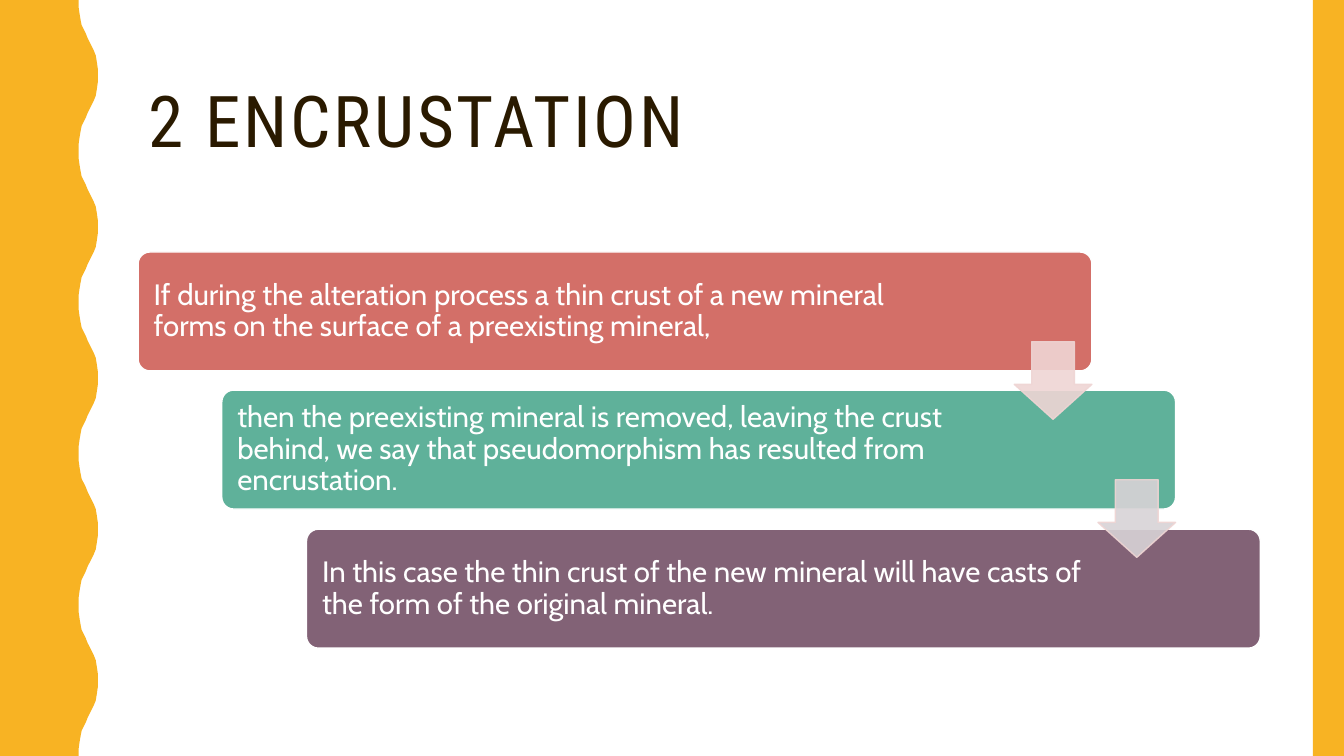
from lxml import etree
from pptx import Presentation
from pptx.dml.color import RGBColor
from pptx.enum.shapes import MSO_SHAPE
from pptx.enum.text import MSO_ANCHOR, PP_ALIGN
from pptx.oxml.ns import qn
from pptx.util import Pt

RECTANGLE = MSO_SHAPE.RECTANGLE
ROUNDED = MSO_SHAPE.ROUNDED_RECTANGLE
DOWN_ARROW = MSO_SHAPE.DOWN_ARROW
MIDDLE = MSO_ANCHOR.MIDDLE
LEFT = PP_ALIGN.LEFT

PX = 9144
SLIDE_WIDTH, SLIDE_HEIGHT = 1333, 750
CARD_WIDTH, CARD_HEIGHT = 946, 118
WAVE_PERIOD = 150
HALF_WAVE = [(78, 0), (78, 7), (79, 14), (80, 20), (81, 25), (83, 29), (85, 33), (87, 38),
             (89, 42), (91, 46), (93, 50), (95, 55), (96, 61), (97, 68), (97, 75)]

COLORS = {
    "white": "FFFFFF",
    "title": "2A1A00",
    "gold": "F8B323",
    "coral": "D36F68",
    "green": "5FB19A",
    "plum": "826276",
    "pink": "EFD5D4",
    "grey": "D8D3D6",
}

STEPS = [
    ("coral", "If during the alteration process a thin crust of a new mineral forms "
              "on the surface of a preexisting mineral,"),
    ("green", "then the preexisting mineral is removed, leaving the crust behind, "
              "we say that pseudomorphism has resulted from encrustation."),
    ("plum", "In this case the thin crust of the new mineral will have casts of "
             "the form of the original mineral."),
]
ARROW_COLORS = ["pink", "grey"]


def color(name):
    """Return the named colour."""
    return RGBColor.from_string(COLORS[name])


def paint(shape, fill, line=None):
    """Give a shape a flat fill and an optional thin outline."""
    shape.shadow.inherit = False
    shape.fill.solid()
    shape.fill.fore_color.rgb = color(fill)
    if line:
        shape.line.color.rgb = color(line)
        shape.line.width = Pt(1)
    else:
        shape.line.fill.background()


def add_preset(slide, kind, box, fill, line=None, adjustments=()):
    """Add a painted preset shape."""
    shape = slide.shapes.add_shape(kind, *(length * PX for length in box))
    for index, value in enumerate(adjustments):
        shape.adjustments[index] = value
    paint(shape, fill, line)
    return shape


def write_text(shape, text, font_name, size, text_color):
    """Write one left-aligned, vertically centred paragraph in a shape."""
    frame = shape.text_frame
    frame.word_wrap = True
    frame.vertical_anchor = MIDDLE
    paragraph = frame.paragraphs[0]
    paragraph.alignment = LEFT
    paragraph.line_spacing = 0.9
    run = paragraph.add_run()
    run.text = text
    run.font.name = font_name
    run.font.size = Pt(size)
    run.font.color.rgb = color(text_color)
    return run


def add_wave(slide):
    """Add the wavy band along the left edge."""
    mirrored = [(x, WAVE_PERIOD - y) for x, y in reversed(HALF_WAVE[1:-1])]
    edge = [(x, top + y) for top in range(0, SLIDE_HEIGHT, WAVE_PERIOD)
            for x, y in HALF_WAVE + mirrored]
    builder = slide.shapes.build_freeform(0, 0, scale=PX)
    builder.add_line_segments(edge + [(78, SLIDE_HEIGHT), (0, SLIDE_HEIGHT)], close=True)
    paint(builder.convert_to_shape(), "gold")


def add_title(slide, text):
    """Add the slide title with widened letter spacing."""
    box = slide.shapes.add_textbox(*(length * PX for length in (137, 42, 1113, 163)))
    run = write_text(box, text, "Roboto Condensed", 51, "title")
    run.font._element.set("spc", "200")


def add_card(slide, left, top, fill, text):
    """Add one step of the staircase with its text."""
    card = add_preset(slide, ROUNDED, (left, top, CARD_WIDTH, CARD_HEIGHT), fill, "white", [0.1])
    frame = card.text_frame
    frame.margin_left, frame.margin_right = 12 * PX, 172 * PX
    frame.margin_top = frame.margin_bottom = 12 * PX
    write_text(card, text, "Cabin", 21, "white")


def add_arrow(slide, left, top, fill):
    """Add a slightly transparent arrow to the next step."""
    arrow = add_preset(slide, DOWN_ARROW, (left, top, 77, 77), fill, "pink", [0.55, 0.45])
    for element in arrow._element.spPr.iter(qn("a:srgbClr")):
        etree.SubElement(element, qn("a:alpha")).set("val", "90000")


def main():
    """Build and save the slide."""
    presentation = Presentation()
    presentation.slide_width = SLIDE_WIDTH * PX
    presentation.slide_height = SLIDE_HEIGHT * PX
    slide = presentation.slides.add_slide(presentation.slide_layouts[6])
    add_title(slide, "2 ENCRUSTATION")
    add_wave(slide)
    add_preset(slide, RECTANGLE, (1302, 0, 31, SLIDE_HEIGHT), "gold")
    corners = [(137 + 167 * index // 2, 250 + 275 * index // 2) for index in range(len(STEPS))]
    for (left, top), (fill, text) in zip(corners, STEPS):
        add_card(slide, left, top, fill, text)
    for (left, top), fill in zip(corners, ARROW_COLORS):
        add_arrow(slide, left + 869, top + 89, fill)
    presentation.save("out.pptx")


if __name__ == "__main__":
    main()
